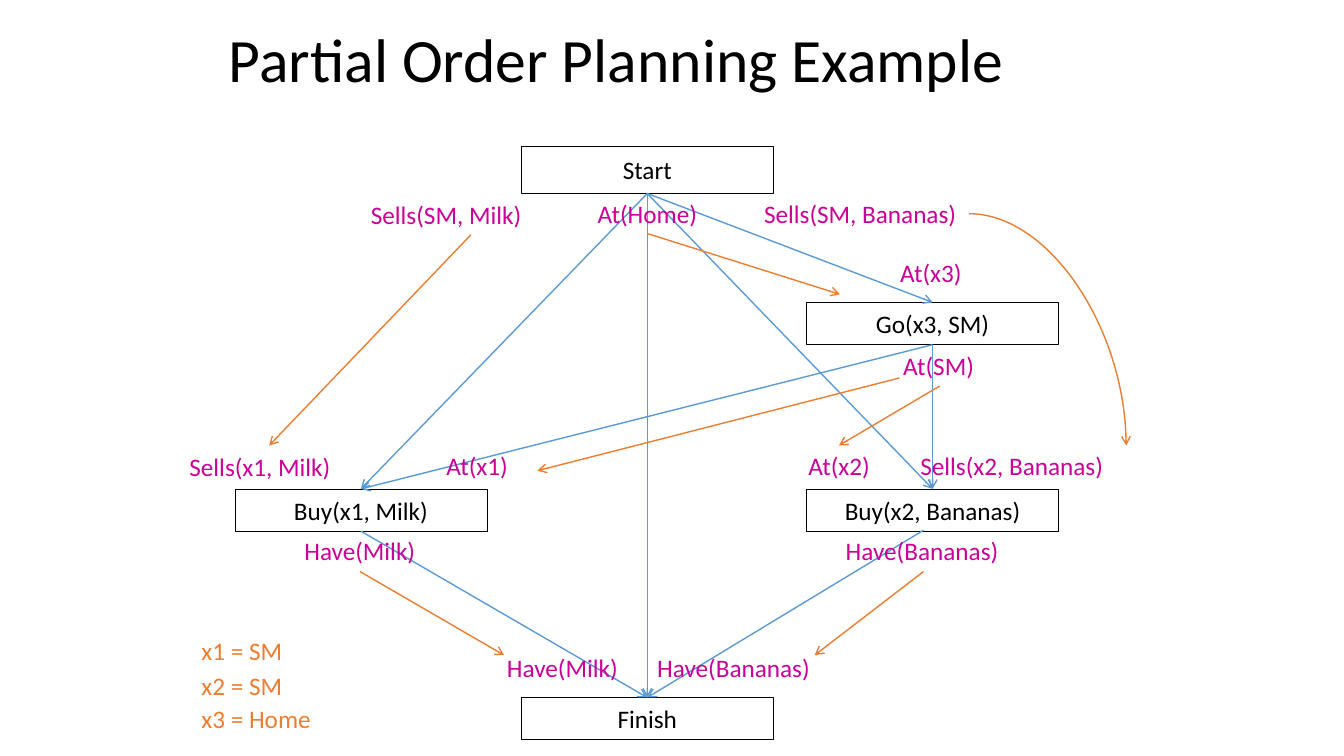
from lxml import etree
from pptx import Presentation, util as u
from pptx.dml.color import RGBColor
from pptx.enum import shapes, text
from pptx.oxml.ns import qn

THEME = {
    "font": "Calibri", "title_size": 44, "body_size": 18,
    "ink": "000000", "paper": "FFFFFF", "condition": "CC0099",
    "order": "5B9BD5", "causal": "ED7D31",
    "box_line": 0.5, "arrow_line": 1,
}

TITLE = "Partial Order Planning Example"
BOX_W = 2.5
LABEL_H = 0.4
BOTTOM, TOP = 2, 0  # connection sites

# step: (left, top, height)
STEPS = {
    "Start": (5.17, 1.45, 0.47),
    "Go(x3, SM)": (8, 3, 0.42),
    "Buy(x1, Milk)": (2.33, 4.85, 0.42),
    "Buy(x2, Bananas)": (8, 4.85, 0.42),
    "Finish": (5.17, 6.92, 0.42),
}
ORDERINGS = [
    ("Start", "Finish"),
    ("Start", "Buy(x1, Milk)"),
    ("Start", "Go(x3, SM)"),
    ("Start", "Buy(x2, Bananas)"),
    ("Buy(x1, Milk)", "Finish"),
    ("Go(x3, SM)", "Buy(x2, Bananas)"),
    ("Go(x3, SM)", "Buy(x1, Milk)"),
]
# This ordering leaves its box slightly left of the middle.
OFFSET_ORDERING = (9.16, 5.26, 6.42, 6.92)

# causal links: from x, y to x, y
CAUSAL_LINKS = [
    (3.57, 5.67, 5, 6.5),
    (9.16, 5.67, 8.08, 6.5),
    (4.67, 2.33, 2.67, 4.42),
    (9.32, 3.83, 8.32, 4.42),
    (8.92, 3.75, 5.33, 4.67),
    (6.43, 2.32, 8.33, 2.92),
]
CURVED_LINK = (9.61, 2.12, 11.17, 4.42)

# text, left, top, width
CONDITIONS = [
    ("Sells(SM, Milk)", 3.58, 1.93, 1.71),
    ("At(Home)", 5.83, 1.92, 1.2),
    ("Sells(SM, Bananas)", 7.48, 1.92, 2.13),
    ("At(x3)", 8.83, 2.5, 0.82),
    ("At(SM)", 8.86, 3.43, 0.91),
    ("Sells(x1, Milk)", 1.78, 4.43, 1.61),
    ("At(x1)", 4.33, 4.42, 0.82),
    ("At(x2)", 7.92, 4.42, 0.82),
    ("Sells(x2, Bananas)", 9.03, 4.42, 2.03),
    ("Have(Milk)", 2.92, 5.26, 1.31),
    ("Have(Bananas)", 8.29, 5.26, 1.73),
    ("Have(Milk)", 4.93, 6.42, 1.31),
    ("Have(Bananas)", 6.42, 6.42, 1.73),
]
BINDINGS = [
    ("x1 = SM", 1.9, 6.25, 1.01),
    ("x2 = SM", 1.9, 6.6, 1.01),
    ("x3 = Home", 1.9, 6.93, 1.3),
]


def color(name):
    return RGBColor.from_string(THEME[name])


def inches(*lengths):
    return [u.Inches(n) for n in lengths]


def write(sp, words, ink="ink", size="body_size", align=text.PP_ALIGN.LEFT, **frame):
    tf = sp.text_frame
    for name, value in frame.items():
        setattr(tf, name, value)
    p = tf.paragraphs[0]
    p.alignment = align
    r = p.add_run()
    r.text = words
    for name, value in {"name": THEME["font"], "size": u.Pt(THEME[size])}.items():
        setattr(r.font, name, value)
    r.font.color.rgb = color(ink)
    return p


def add_title(s):
    sp = s.shapes.title
    sp.left, sp.top, sp.width, sp.height = inches(2.17, 0, 9, 1.25)
    p = write(sp, TITLE, size="title_size", word_wrap=True,
              vertical_anchor=text.MSO_ANCHOR.MIDDLE,
              auto_size=text.MSO_AUTO_SIZE.NONE)
    p.line_spacing = 0.9


def add_step(s, name, left, top, height):
    sp = s.shapes.add_shape(shapes.MSO_SHAPE.RECTANGLE, *inches(left, top, BOX_W, height))
    sp.shadow.inherit = False
    sp.fill.solid()
    sp.fill.fore_color.rgb = color("paper")
    sp.line.color.rgb = color("ink")
    sp.line.width = u.Pt(THEME["box_line"])
    write(sp, name, align=text.PP_ALIGN.CENTER, word_wrap=True,
          vertical_anchor=text.MSO_ANCHOR.MIDDLE)
    return sp


def add_label(s, words, left, top, width, ink):
    sp = s.shapes.add_textbox(*inches(left, top, width, LABEL_H))
    write(sp, words, ink, word_wrap=False,
          auto_size=text.MSO_AUTO_SIZE.SHAPE_TO_FIT_TEXT)


def add_arrow(s, ends, ink, kind=shapes.MSO_CONNECTOR.STRAIGHT):
    cx = s.shapes.add_connector(kind, *inches(*ends))
    cx.line.color.rgb = color(ink)
    cx.line.width = u.Pt(THEME["arrow_line"])
    etree.SubElement(cx.line._get_or_add_ln(), qn("a:tailEnd"), type="arrow")
    etree.SubElement(cx._element.spPr, qn("a:effectLst"))
    return cx


def main():
    prs = Presentation()
    prs.slide_width, prs.slide_height = inches(13.33, 7.5)
    s = prs.slides.add_slide(prs.slide_layouts[5])
    add_title(s)

    boxes = {name: add_step(s, name, *place) for name, place in STEPS.items()}
    for before, after in ORDERINGS:
        cx = add_arrow(s, (0, 0, 1, 1), "order")
        cx.begin_connect(boxes[before], BOTTOM)
        cx.end_connect(boxes[after], TOP)
    add_arrow(s, OFFSET_ORDERING, "order").end_connect(boxes["Finish"], TOP)

    for ends in CAUSAL_LINKS:
        add_arrow(s, ends, "causal")
    curve = add_arrow(s, CURVED_LINK, "causal", shapes.MSO_CONNECTOR.CURVE)
    curve._element.spPr.find(qn("a:prstGeom")).set("prst", "curvedConnector2")

    for labels, ink in ((CONDITIONS, "condition"), (BINDINGS, "causal")):
        for label in labels:
            add_label(s, *label, ink)
    prs.save("out.pptx")


if __name__ == "__main__":
    main()
